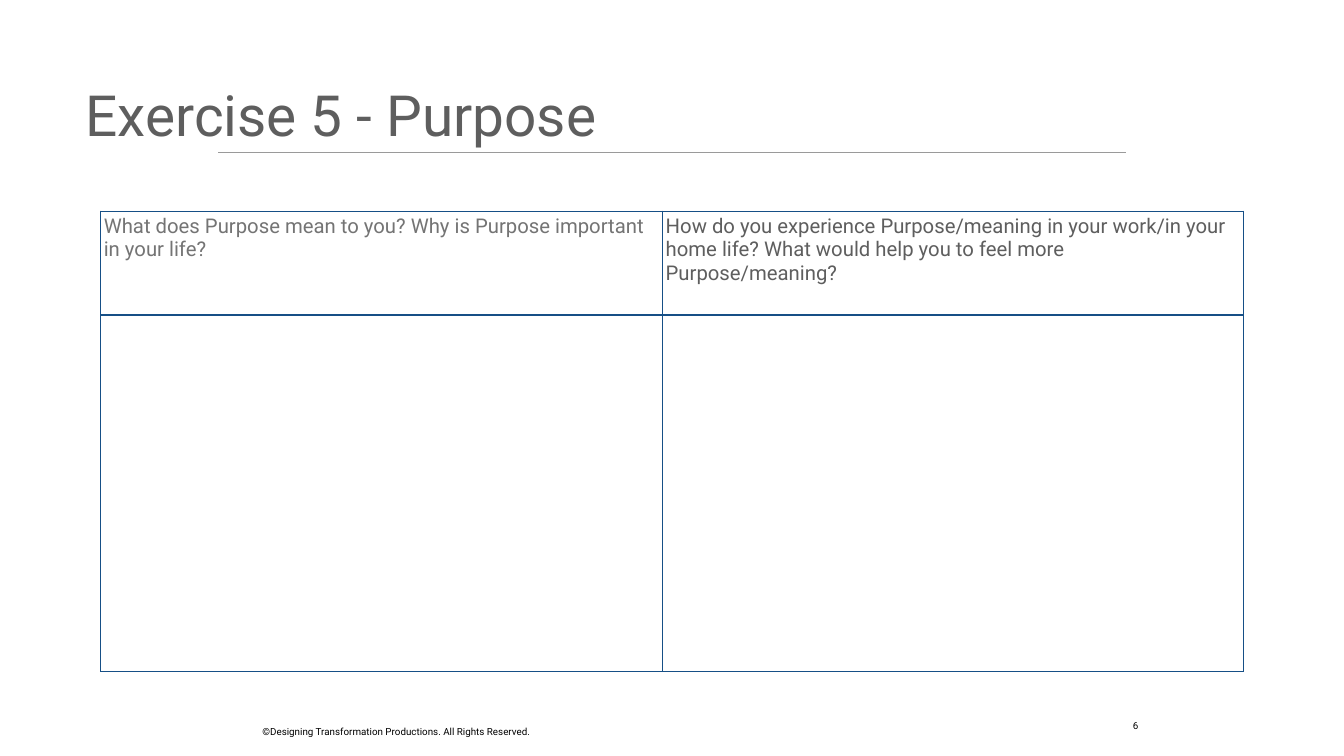
from dataclasses import dataclass

from lxml import etree
from pptx import Presentation
from pptx.dml.color import RGBColor
from pptx.enum.shapes import MSO_CONNECTOR
from pptx.enum.text import MSO_ANCHOR, MSO_AUTO_SIZE, PP_ALIGN
from pptx.oxml.ns import qn
from pptx.util import Pt

LINE = MSO_CONNECTOR.STRAIGHT
TOP, MIDDLE, BOTTOM = MSO_ANCHOR.TOP, MSO_ANCHOR.MIDDLE, MSO_ANCHOR.BOTTOM
LEFT, CENTER = PP_ALIGN.LEFT, PP_ALIGN.CENTER
FIXED = MSO_AUTO_SIZE.NONE

PX = 9144  # 100 px to the inch
FONT = "Roboto"
GREY, PALE, BLACK, WHITE = "5E5E5E", "747474", "000000", "FFFFFF"
RULE, BLUE = "9A9A9A", "164F86"
SIDES = ("margin_left", "margin_top", "margin_right", "margin_bottom")


@dataclass
class Label:
    text: str
    box: tuple[int, int, int, int]
    size: int
    color: str
    align: PP_ALIGN
    anchor: MSO_ANCHOR
    wrap: bool


@dataclass
class Prompt:
    text: str
    color: str
    width: int


TITLE = Label("Exercise 5 - Purpose", (162, 39, 1609, 375), 81, GREY, LEFT, MIDDLE, True)
NOTES = [
    Label("©Designing Transformation Productions. All Rights Reserved.",
          (495, 1429, 583, 42), 14, BLACK, CENTER, BOTTOM, False),
    Label("6", (2240, 1420, 41, 39), 14, BLACK, LEFT, BOTTOM, False),
]
PROMPTS = [
    Prompt("What does Purpose mean to you? Why is Purpose important in your life?", PALE, 1115),
    Prompt("How do you experience Purpose/meaning in your work/in your home life? "
           "What would help you to feel more Purpose/meaning?", GREY, 1152),
]
ROWS = (206, 708)


def px(*values: int) -> list[int]:
    return [value * PX for value in values]


def rgb(color: str) -> RGBColor:
    return RGBColor.from_string(color)


def apply(target, values: dict) -> None:
    for name, value in values.items():
        setattr(target, name, value)


def style(para, size: int, color: str) -> None:
    apply(para.font, {"name": FONT, "size": Pt(size), "bold": False})
    para.font.color.rgb = rgb(color)


def write(shape, label: Label) -> None:
    apply(shape, dict(zip(("left", "top", "width", "height"), px(*label.box))))
    frame = shape.text_frame
    apply(frame, {"text": label.text, "word_wrap": label.wrap, "auto_size": FIXED,
                  "vertical_anchor": label.anchor, **dict.fromkeys(SIDES, 8 * PX)})
    para = frame.paragraphs[0]
    para.alignment = label.align
    style(para, label.size, label.color)


def edge(cell) -> None:
    """Draw all four borders; call before the fill is set."""
    props = cell._tc.get_or_add_tcPr()
    for side in ("a:lnL", "a:lnR", "a:lnT", "a:lnB"):
        line = etree.SubElement(props, qn(side), w=str(Pt(2)))
        fill = etree.SubElement(line, qn("a:solidFill"))
        etree.SubElement(fill, qn("a:srgbClr"), val=BLUE)


def draw_rule(slide) -> None:
    rule = slide.shapes.add_connector(LINE, *px(433, 303, 2234, 303))
    rule.line.color.rgb = rgb(RULE)
    rule.line.width = Pt(1)
    etree.SubElement(rule._element.spPr, qn("a:effectLst"))


def draw_table(slide) -> None:
    width = sum(prompt.width for prompt in PROMPTS)
    table = slide.shapes.add_table(len(ROWS), len(PROMPTS),
                                   *px(200, 419, width, sum(ROWS))).table
    apply(table, {"first_row": False, "horz_banding": False})
    for row, height in zip(table.rows, ROWS):
        row.height = height * PX
    for col, prompt in enumerate(PROMPTS):
        table.columns[col].width = prompt.width * PX
        table.cell(0, col).text = prompt.text
        style(table.cell(0, col).text_frame.paragraphs[0], 29, prompt.color)
    for cell in table.iter_cells():
        apply(cell, {"vertical_anchor": TOP, **dict.fromkeys(SIDES, 6 * PX)})
        edge(cell)
        cell.fill.solid()
        cell.fill.fore_color.rgb = rgb(WHITE)


def main() -> None:
    deck = Presentation()
    deck.slide_width, deck.slide_height = px(2667, 1500)
    slide = deck.slides.add_slide(deck.slide_layouts[5])
    draw_rule(slide)
    for note in NOTES:
        write(slide.shapes.add_textbox(*px(*note.box)), note)
    draw_table(slide)
    write(slide.shapes.title, TITLE)
    deck.save("out.pptx")


if __name__ == "__main__":
    main()
